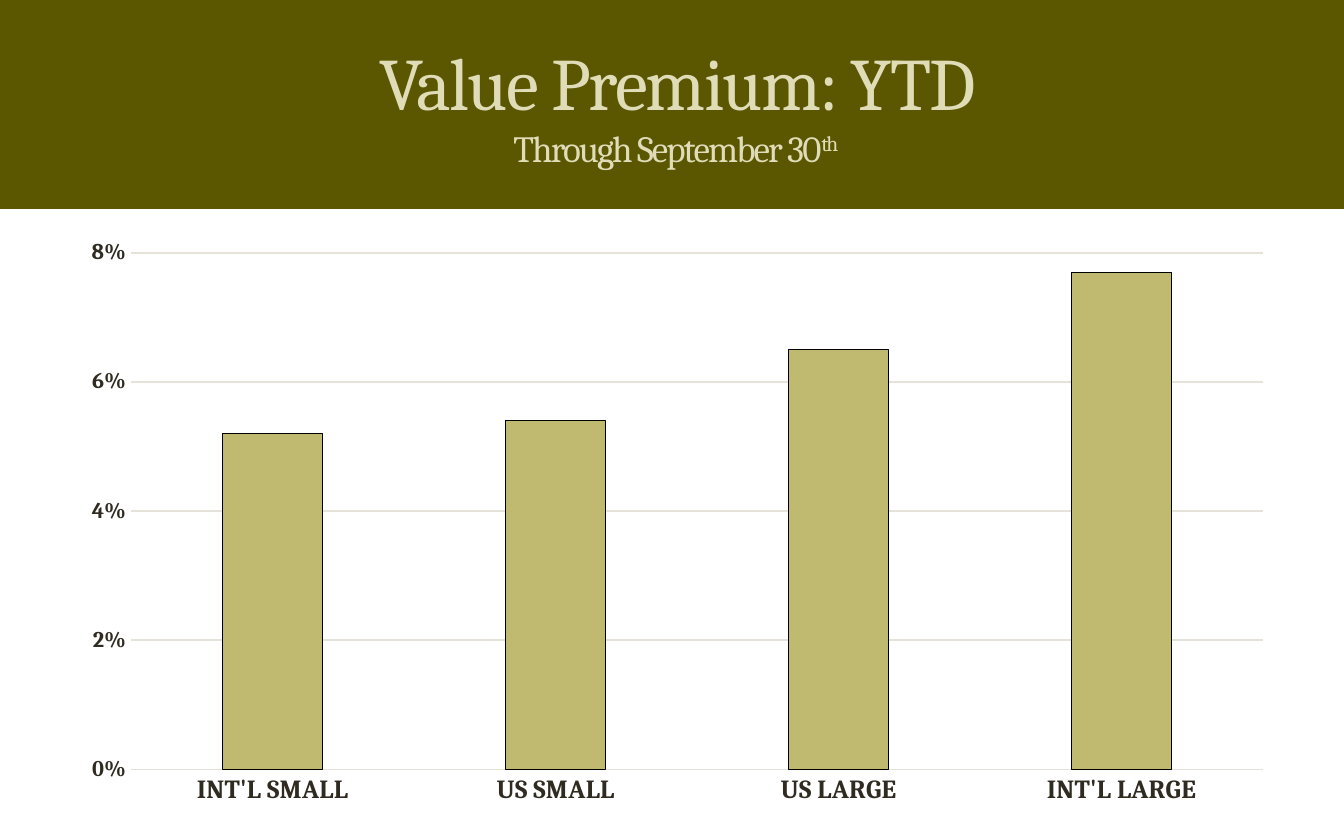
from typing import NamedTuple

from lxml.etree import SubElement as Sub
from pptx import Presentation
from pptx.chart.data import CategoryChartData as ChartData
from pptx.dml.color import RGBColor as Rgb
from pptx.enum.chart import XL_CHART_TYPE as Kind, XL_TICK_MARK as Tick
from pptx.enum.shapes import MSO_SHAPE as Shape
from pptx.enum.text import MSO_ANCHOR as Anchor, MSO_AUTO_SIZE as Fit, PP_ALIGN as Align
from pptx.oxml.ns import qn
from pptx.util import Pt

FONT = "Cambria"
COLORS = {
    "band": "5B5600",
    "title": "DFDCB7",
    "text": "2F2B20",
    "grid": "E5E2D9",
    "bar": "C0BA71",
    "edge": "000000",
}


class Bar(NamedTuple):
    name: str
    value: float


BARS = [
    Bar("INT'L SMALL", 0.052),
    Bar("US SMALL", 0.054),
    Bar("US LARGE", 0.065),
    Bar("INT'L LARGE", 0.077),
]


def tint(name: str) -> Rgb:
    return Rgb.from_string(COLORS[name])


def style(font, size: float, color: str, bold: bool = False) -> None:
    font.name, font.size, font.bold = FONT, Pt(size), bold
    font.color.rgb = tint(color)


def rule(line, color: str, width: float) -> None:
    line.color.rgb = tint(color)
    line.width = Pt(width)


def draw_band(slide) -> None:
    band = slide.shapes.add_shape(Shape.RECTANGLE, 0, 0, Pt(720), Pt(110.88))
    band.shadow.inherit = False
    band.fill.solid()
    band.fill.fore_color.rgb = tint("band")
    rule(band.line, "band", 2)


def draw_title(slide) -> None:
    title = slide.shapes.title
    title.left, title.top, title.width, title.height = Pt(36), Pt(18), Pt(653.76), Pt(74.88)
    frame = title.text_frame
    frame.auto_size, frame.word_wrap = Fit.NONE, True
    frame.vertical_anchor = Anchor.MIDDLE
    para = frame.paragraphs[0]
    para.text = "Value Premium: YTD\vThrough September 30"
    para.alignment = Align.CENTER
    para.add_run().text = "th "
    for run, size in zip(para.runs, (39.6, 19.8, 19.8)):
        style(run.font, size, "title")
        run.font._element.set("spc", "-100")
    para.runs[-1].font._element.set("baseline", "30000")
    # The line break takes the size of the first line
    Sub(para._p.find(qn("a:br")), qn("a:rPr")).set("sz", "3960")
    # Bring the title in front of the band
    slide.shapes._spTree.append(title._element)


def draw_chart(slide, bars: list[Bar]) -> None:
    data = ChartData(number_format="0%")
    data.categories = [bar.name for bar in bars]
    data.add_series("Series 1", [bar.value for bar in bars])
    chart = slide.shapes.add_chart(
        Kind.COLUMN_CLUSTERED, Pt(36), Pt(122.4), Pt(653.76), Pt(315.36), data
    ).chart
    chart.has_legend = chart.has_title = False
    style(chart.font, 10, "text")

    # Bars
    plot = chart.plots[0]
    plot.gap_width = 182
    plot.vary_by_categories = False
    series = plot.series[0]
    series.format.fill.solid()
    series.format.fill.fore_color.rgb = tint("bar")
    rule(series.format.line, "edge", 0.5)

    # Axes
    cat, val = chart.category_axis, chart.value_axis
    for axis, size in ((cat, 14), (val, 12)):
        axis.major_tick_mark = axis.minor_tick_mark = Tick.NONE
        style(axis.tick_labels.font, size, "text", True)
    rule(cat.format.line, "grid", 0.75)
    val.format.line.fill.background()
    val.minimum_scale, val.maximum_scale, val.major_unit = 0, 0.08, 0.02
    val.tick_labels.number_format = "0%"
    val.tick_labels.number_format_is_linked = False
    val.has_major_gridlines = True
    rule(val.major_gridlines.format.line, "grid", 0.75)


def main() -> None:
    deck = Presentation()
    deck.slide_width, deck.slide_height = Pt(720), Pt(450)
    slide = deck.slides.add_slide(deck.slide_layouts[5])
    draw_band(slide)
    draw_title(slide)
    draw_chart(slide, BARS)
    deck.save("out.pptx")


if __name__ == "__main__":
    main()
